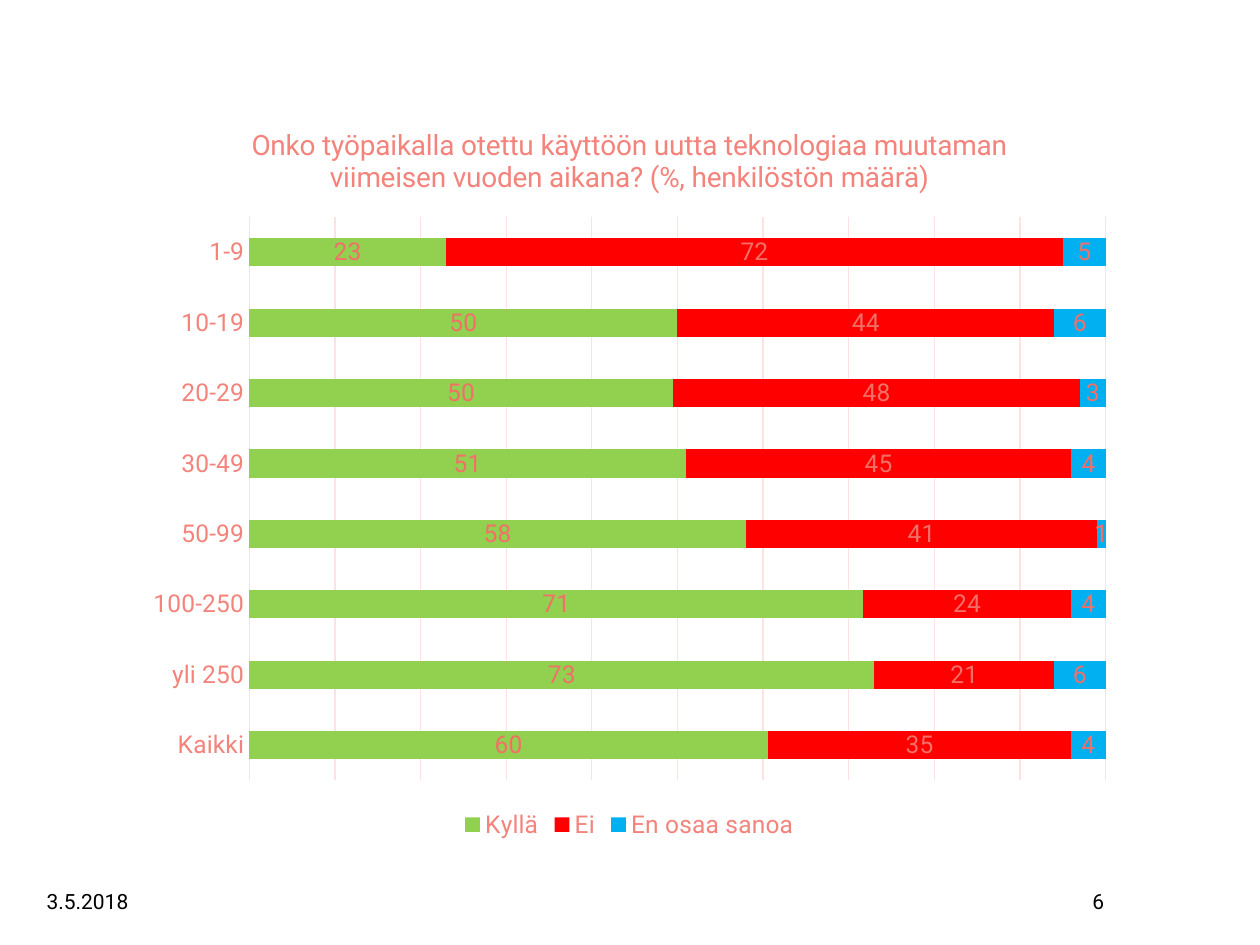
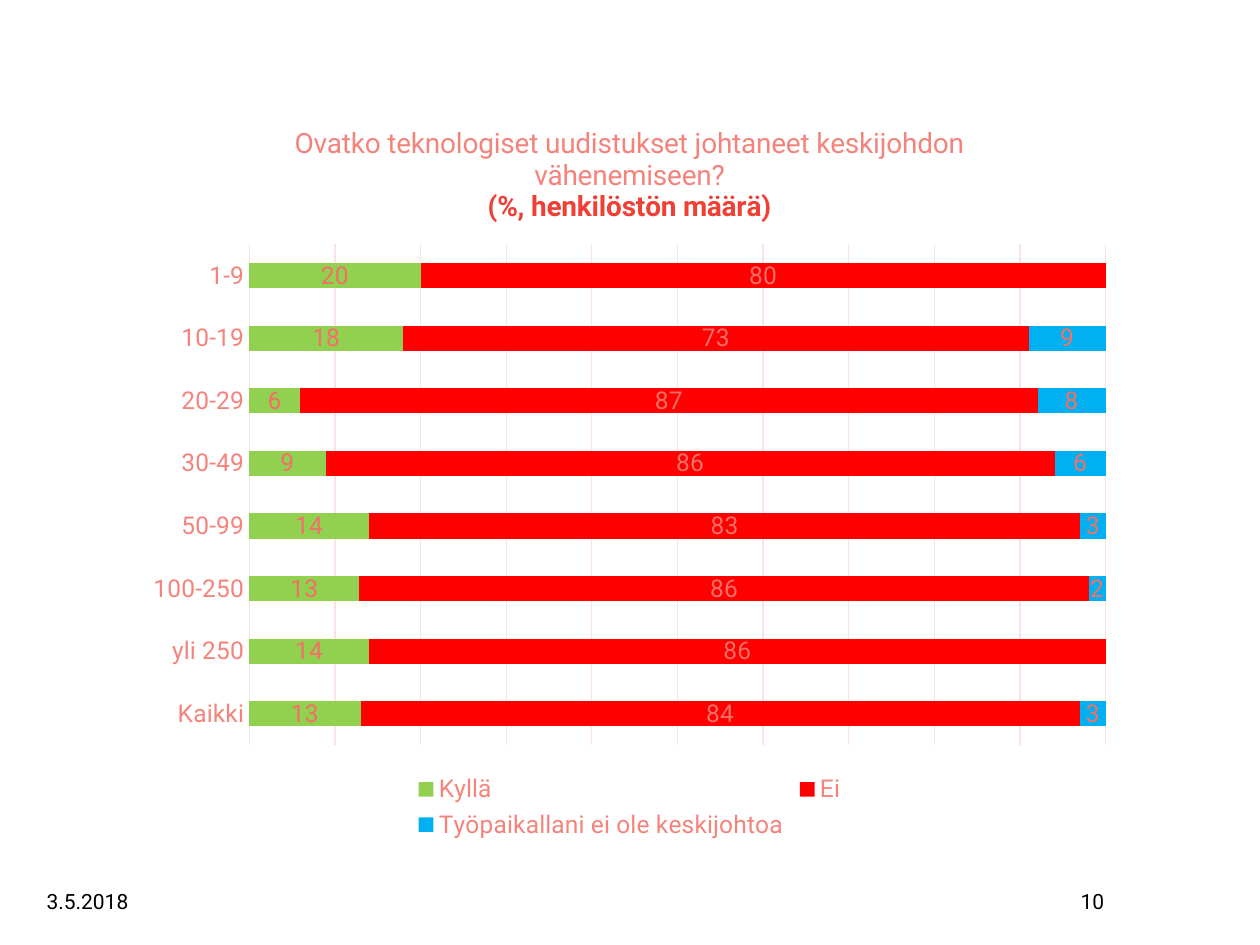
from dataclasses import dataclass

from pptx import Presentation
from pptx.chart.data import CategoryChartData as Data
from pptx.dml.color import RGBColor
from pptx.enum.chart import XL_CHART_TYPE as Kind
from pptx.enum.chart import XL_LABEL_POSITION as Spot
from pptx.enum.chart import XL_LEGEND_POSITION as Side
from pptx.enum.chart import XL_TICK_MARK as Tick
from pptx.enum.text import MSO_ANCHOR as Anchor
from pptx.enum.text import PP_ALIGN as Align
from pptx.util import Cm, Pt

# Shared look
FACE = "Roboto"
RED, PINK, LABEL, GRID = "EE4035", "F4837C", "F27068", "FCE2E1"
FILLS = ("92D050", "FF0000", "00B0F0")
SIZES = ("1-9", "10-19", "20-29", "30-49", "50-99", "100-250", "yli 250", "Kaikki")
DATE = "3.5.2018"


@dataclass(frozen=True)
class Line:
    text: str
    tint: str = PINK
    bold: bool = False


@dataclass(frozen=True)
class Survey:
    title: tuple[Line, ...]
    answers: dict[str, tuple]
    page: str


SURVEYS = (
    Survey(
        (Line("Onko työpaikalla otettu käyttöön uutta teknologiaa muutaman "
              "viimeisen vuoden aikana? (%, henkilöstön määrä)"),),
        {
            "Kyllä": (23, 50, 50, 51, 58, 71, 73, 60),
            "Ei": (72, 44, 48, 45, 41, 24, 21, 35),
            "En osaa sanoa": (5, 6, 3, 4, 1, 4, 6, 4),
        },
        "6",
    ),
    Survey(
        (Line("Ovatko teknologiset uudistukset johtaneet keskijohdon vähenemiseen?"),
         Line("(%, henkilöstön määrä)", RED, True)),
        {
            "Kyllä": (20, 18, 6, 9, 14, 13, 14, 13),
            "Ei": (80, 73, 87, 86, 83, 86, 86, 84),
            "Työpaikallani ei ole keskijohtoa": (None, 9, 8, 6, 3, 2, None, 3),
        },
        "10",
    ),
)


def color(code: str) -> RGBColor:
    return RGBColor.from_string(code)


def style(font, size: float, tint: str, bold: bool = False) -> None:
    font.name, font.size, font.bold = FACE, Pt(size), bold
    font.color.rgb = color(tint)


def rule(line) -> None:
    line.color.rgb = color(GRID)
    line.width = Pt(0.75)


def add_foot(slide, text: str, left: float, width: float, align: Align) -> None:
    box = slide.shapes.add_textbox(Cm(left), Cm(17.65), Cm(width), Cm(1.02))
    frame = box.text_frame
    frame.word_wrap = True
    frame.vertical_anchor = Anchor.MIDDLE
    frame.text = text
    para = frame.paragraphs[0]
    para.alignment = align
    style(para.runs[0].font, 12, "000000")


def add_title(chart, lines: tuple[Line, ...]) -> None:
    chart.has_title = True
    frame = chart.chart_title.text_frame
    frame.text = "\n".join(line.text for line in lines)
    for para, line in zip(frame.paragraphs, lines):
        style(para.runs[0].font, 16, line.tint, line.bold)


def add_bars(slide, survey: Survey) -> None:
    data = Data(number_format="0")
    data.categories = SIZES
    for name, values in survey.answers.items():
        data.add_series(name, values)
    chart = slide.shapes.add_chart(
        Kind.BAR_STACKED_100, Cm(2.69), Cm(2.03), Cm(20), Cm(15), data).chart
    style(chart.font, 10, RED)
    add_title(chart, survey.title)

    # Legend
    chart.has_legend = True
    chart.legend.position = Side.BOTTOM
    chart.legend.include_in_layout = False
    style(chart.legend.font, 14, PINK)

    # Axes
    cats, vals = chart.category_axis, chart.value_axis
    cats.reverse_order = True
    cats.major_tick_mark = cats.minor_tick_mark = Tick.NONE
    style(cats.tick_labels.font, 14, PINK)
    rule(cats.format.line)
    vals.visible = False
    vals.has_major_gridlines = True
    rule(vals.major_gridlines.format.line)

    # Bars and their values
    plot = chart.plots[0]
    plot.gap_width, plot.overlap = 150, 100
    plot.vary_by_categories = False
    for bar, fill in zip(plot.series, FILLS):
        bar.format.fill.solid()
        bar.format.fill.fore_color.rgb = color(fill)
        labels = bar.data_labels
        labels.show_value = True
        labels.position = Spot.CENTER
        style(labels.font, 14, LABEL)


def main() -> None:
    deck = Presentation()
    deck.slide_width, deck.slide_height = Cm(25.4), Cm(19.05)
    for survey in SURVEYS:
        slide = deck.slides.add_slide(deck.slide_layouts[6])
        add_foot(slide, DATE, 0.69, 6.07, Align.LEFT)
        add_bars(slide, survey)
        add_foot(slide, survey.page, 20.12, 2.39, Align.RIGHT)
    deck.save("out.pptx")


if __name__ == "__main__":
    main()
